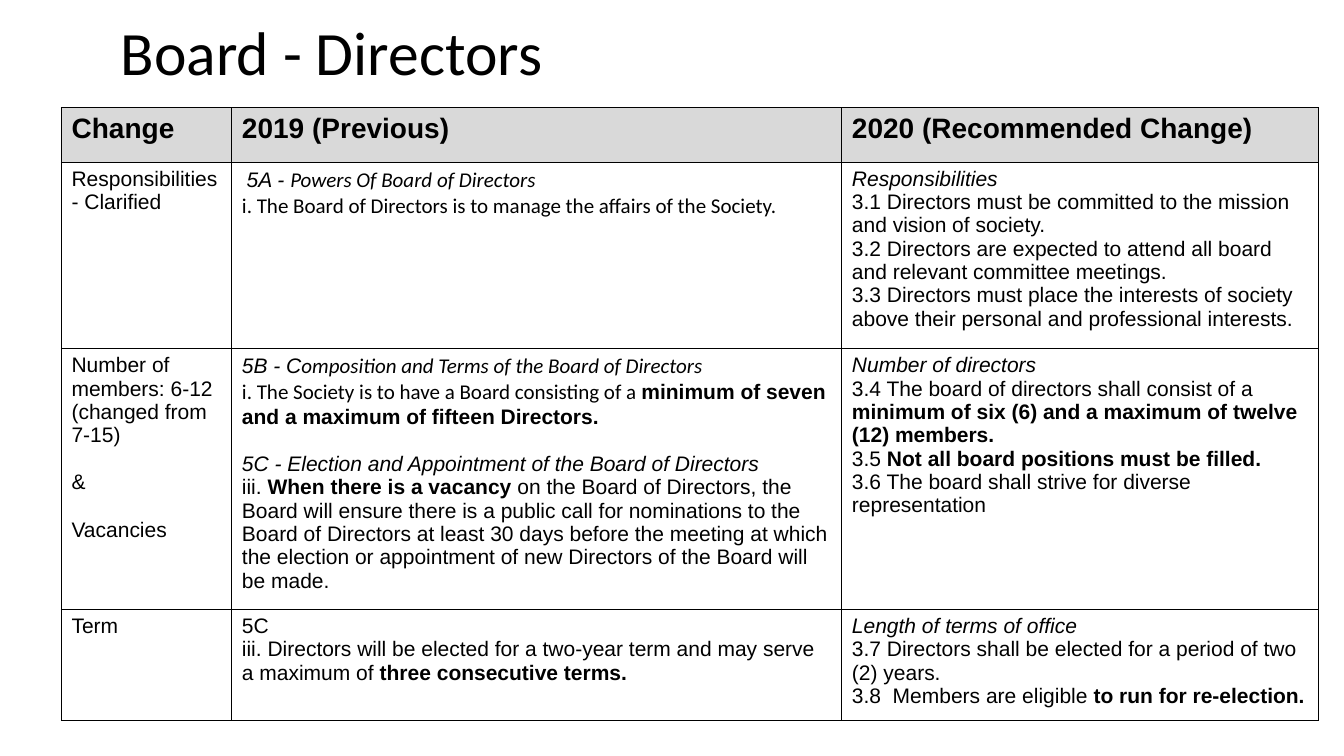
import pptx
import pptx.dml.color
import pptx.enum.text
import pptx.oxml
import pptx.oxml.ns
import pptx.util
from pptx.util import Inches

BORDER_XML = (
    '<a:{side} {ns} w="12700"><a:solidFill><a:srgbClr val="000000"/>'
    '</a:solidFill></a:{side}>'
)

# Run formats
HEADING = {"name": "Arial", "size": pptx.util.Pt(20), "bold": True, "italic": False}
PLAIN = {"name": "Arial", "size": pptx.util.Pt(15), "bold": False, "italic": False}
BOLD = {**PLAIN, "bold": True}
ITALIC = {**PLAIN, "italic": True}
CALIBRI = {**PLAIN, "name": "Calibri"}
CALIBRI_ITALIC = {**ITALIC, "name": "Calibri"}
TITLE = {**CALIBRI, "size": pptx.util.Pt(44)}

# Paragraph formats
CLOSE = {}
GAP = {"space_before": pptx.util.Pt(17)}


def color(hex_string):
    return pptx.dml.color.RGBColor.from_string(hex_string)


def write_paragraphs(frame, paragraphs):
    for index, (layout, runs) in enumerate(paragraphs):
        paragraph = frame.add_paragraph() if index else frame.paragraphs[0]
        for attribute, value in layout.items():
            setattr(paragraph, attribute, value)
        for text, style in runs:
            run = paragraph.add_run()
            run.text = text
            run.font.color.rgb = color("000000")
            for attribute, value in style.items():
                setattr(run.font, attribute, value)


presentation = pptx.Presentation()
presentation.slide_width = Inches(13.33)
presentation.slide_height = Inches(7.5)
slide = presentation.slides.add_slide(presentation.slide_layouts[6])

# Title
title = slide.shapes.add_textbox(Inches(1.1), Inches(-0.17), Inches(11.5), Inches(1.45))
title.text_frame.word_wrap = True
title.text_frame.vertical_anchor = pptx.enum.text.MSO_ANCHOR.MIDDLE
write_paragraphs(title.text_frame, [({"line_spacing": 0.9}, [("Board - Directors", TITLE)])])

# Bylaw changes: rows of cells, each cell a list of (layout, runs)
changes = [
    [
        [(CLOSE, [(heading, HEADING)])]
        for heading in ("Change", "2019 (Previous)", "2020 (Recommended Change)")
    ],
    [
        [(CLOSE, [("Responsibilities - Clarified", PLAIN)])],
        [
            (CLOSE, [("\u00a0", CALIBRI_ITALIC), ("5A - ", ITALIC),
                     ("Powers Of Board of Directors", CALIBRI_ITALIC)]),
            (CLOSE, [("i. The Board of Directors is to manage the affairs of the Society.", CALIBRI)]),
        ],
        [
            (CLOSE, [("Responsibilities", ITALIC)]),
            (CLOSE, [("3.1 Directors must be committed to the mission and vision of society.", PLAIN)]),
            (CLOSE, [("3.2 Directors are expected to attend all board and relevant "
                      "committee meetings.", PLAIN)]),
            (CLOSE, [("3.3 Directors must place the interests of society above their "
                      "personal and professional interests.", PLAIN)]),
        ],
    ],
    [
        [
            (CLOSE, [("Number of members: 6-12 (changed from 7-15)", PLAIN)]),
            (GAP, [("&", PLAIN)]),
            (GAP, [("Vacancies", PLAIN)]),
        ],
        [
            (CLOSE, [("5B - C", ITALIC),
                     ("omposition and Terms of the Board of Directors", CALIBRI_ITALIC)]),
            (CLOSE, [("i. The Society is to have a Board consisting of a ", CALIBRI),
                     ("minimum of seven and a maximum of fifteen Directors.", BOLD)]),
            (GAP, [("5C - Election and Appointment of the Board of Directors", ITALIC)]),
            (CLOSE, [("iii. ", PLAIN), ("When there is a vacancy", BOLD),
                     (" on the Board of Directors, the Board will ensure there is a public "
                      "call for nominations to the Board of Directors at least 30 days before "
                      "the meeting at which the election or appointment of new Directors of "
                      "the Board will be made.", PLAIN)]),
        ],
        [
            (CLOSE, [("Number of directors", ITALIC)]),
            (CLOSE, [("3.4 The board of directors shall consist of a ", PLAIN),
                     ("minimum of six (6) and a maximum of twelve (12) members.", BOLD)]),
            (CLOSE, [("3.5 ", PLAIN), ("Not all board positions must be filled.", BOLD)]),
            (CLOSE, [("3.6 The board shall strive for diverse representation", PLAIN)]),
        ],
    ],
    [
        [(CLOSE, [("Term", PLAIN)])],
        [
            (CLOSE, [("5C", PLAIN)]),
            (CLOSE, [("iii. Directors will be elected for a two-year term and may serve "
                      "a maximum of", PLAIN), (" three consecutive terms.", BOLD)]),
        ],
        [
            (CLOSE, [("Length of terms of office", ITALIC)]),
            (CLOSE, [("3.7 Directors shall be elected for a period of two (2) years.", PLAIN)]),
            (CLOSE, [("3.8  Members are eligible ", PLAIN), ("to run for re-election.", BOLD)]),
        ],
    ],
]

# Comparison table
column_widths = [1.69, 6.05, 4.73]
row_heights = [0.54, 1.73, 2.46, 1.03]
comparison = slide.shapes.add_table(
    len(row_heights), len(column_widths), Inches(0.61), Inches(1.07),
    Inches(sum(column_widths)), Inches(sum(row_heights)),
).table
comparison.first_row = False
comparison.horz_banding = False
for column, width in zip(comparison.columns, column_widths):
    column.width = Inches(width)
for row, height in zip(comparison.rows, row_heights):
    row.height = Inches(height)

# Cell text, fills and borders
for row_index, change in enumerate(changes):
    for column_index, paragraphs in enumerate(change):
        cell = comparison.cell(row_index, column_index)
        write_paragraphs(cell.text_frame, paragraphs)
        cell.fill.solid()
        cell.fill.fore_color.rgb = color("FFFFFF" if row_index else "D9D9D9")
        properties = cell._tc.get_or_add_tcPr()
        for position, side in enumerate(("lnL", "lnR", "lnT", "lnB")):
            border = BORDER_XML.format(side=side, ns=pptx.oxml.ns.nsdecls("a"))
            properties.insert(position, pptx.oxml.parse_xml(border))

presentation.save("out.pptx")
